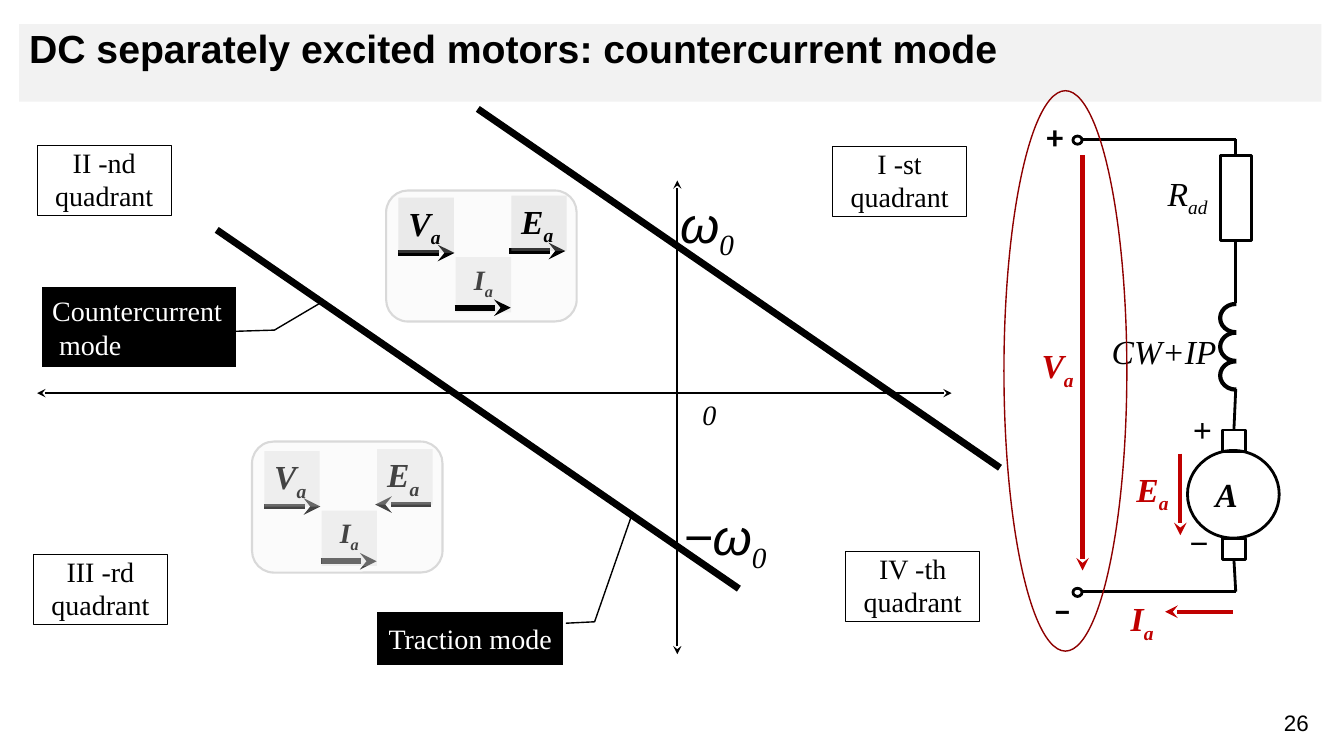
import dataclasses
import typing

import pptx
import pptx.dml.color
import pptx.enum.shapes
import pptx.enum.text
import pptx.oxml.ns
import pptx.util
from lxml import etree

Pt = pptx.util.Pt
KIND = pptx.enum.shapes.MSO_SHAPE
ALIGN = pptx.enum.text.PP_ALIGN
ANCHOR = pptx.enum.text.MSO_ANCHOR
HUES = {"black": "000000", "white": "FFFFFF", "band": "F2F2F2", "tile": "BFBFBF",
        "edge": "D9D9D9", "red": "C00000", "wine": "8E0000"}
ROMAN = "Times New Roman"
LEAD = 882.7  # x of the armature wire

deck = pptx.Presentation()
deck.slide_width, deck.slide_height = Pt(960), Pt(540)
slide = deck.slides.add_slide(deck.slide_layouts[6])
shapes = slide.shapes


@dataclasses.dataclass
class Box:
    x: float
    y: float
    w: float
    h: float
    fill: str = ""
    line: str = ""
    width: float = 1
    kind: int = KIND.RECTANGLE
    alpha: int = 100


@dataclasses.dataclass
class Font:
    size: float = 24
    hue: str = "black"
    bold: bool = False
    slant: bool = False
    face: str = ROMAN


@dataclasses.dataclass
class Label:
    box: Box
    main: str
    sub: str
    font: Font


def tint(name: str) -> pptx.dml.color.RGBColor:
    return pptx.dml.color.RGBColor.from_string(HUES[name])


def child(parent: typing.Any, tag: str, **attrs: str) -> None:
    etree.SubElement(parent, pptx.oxml.ns.qn(tag), attrs)


def draw(box: Box) -> typing.Any:
    shape = shapes.add_shape(box.kind, Pt(box.x), Pt(box.y), Pt(box.w), Pt(box.h))
    shape.shadow.inherit = False
    if box.fill:
        shape.fill.solid()
        shape.fill.fore_color.rgb = tint(box.fill)
        if box.alpha < 100:
            color = shape.fill._xPr.find(".//" + pptx.oxml.ns.qn("a:srgbClr"))
            child(color, "a:alpha", val=str(box.alpha * 1000))
    else:
        shape.fill.background()
    if box.line:
        shape.line.color.rgb = tint(box.line)
        shape.line.width = Pt(box.width)
    else:
        shape.line.fill.background()
    return shape


def link(x1: float, y1: float, x2: float, y2: float, hue: str = "black",
         width: float = 2, ends: tuple[str, ...] = ()) -> typing.Any:
    """Draw a straight line; ends lists headEnd and tailEnd where an arrowhead sits."""
    line = shapes.add_connector(pptx.enum.shapes.MSO_CONNECTOR.STRAIGHT,
                                Pt(x1), Pt(y1), Pt(x2), Pt(y2))
    line.line.color.rgb = tint(hue)
    line.line.width = Pt(width)
    for end in ends:
        child(line.line._get_or_add_ln(), "a:" + end, type="stealth")
    child(line._element.spPr, "a:effectLst")
    return line


def style(run: typing.Any, font: Font) -> None:
    run.font.size, run.font.name = Pt(font.size), font.face
    run.font.bold, run.font.italic = font.bold, font.slant
    run.font.color.rgb = tint(font.hue)


def write(box: Box, text: str, font: Font, align: int = ALIGN.LEFT,
          anchor: int = ANCHOR.TOP, inset: bool = True) -> typing.Any:
    """Draw a box holding text, one paragraph a line."""
    shape = draw(box) if box.fill or box.line else shapes.add_textbox(
        Pt(box.x), Pt(box.y), Pt(box.w), Pt(box.h))
    frame = shape.text_frame
    frame.word_wrap, frame.vertical_anchor = True, anchor
    if not inset:
        frame.margin_left = frame.margin_right = frame.margin_top = frame.margin_bottom = 0
    frame.text = text
    for para in frame.paragraphs:
        para.alignment = align
        for run in para.runs:
            style(run, font)
    return shape


def mark(label: Label, gap: float = 1.15, align: int = ALIGN.LEFT) -> None:
    """Write a symbol with its subscript."""
    para = write(label.box, label.main, label.font, align).text_frame.paragraphs[0]
    para.line_spacing = gap
    if label.sub:
        run = para.add_run()
        run.text = label.sub
        style(run, dataclasses.replace(label.font, face=ROMAN))
        run._r.get_or_add_rPr().set("baseline", "-25000")


def panel(x: float, y: float, drop: float, veil: bool) -> None:
    """Draw a vector panel; veil lays its card over the symbols and turns E round."""
    def tile(dx: float, dy: float, main: str, size: float, align: int) -> None:
        box = Box(x + dx, y + drop + dy, 39.6, 39.6, "tile", alpha=28)
        mark(Label(box, main, "a", Font(size, bold=True, slant=True)), 1, align)

    def base() -> None:
        tile(49.7, 47.5, "I", 20, ALIGN.CENTER)

    def card() -> None:
        draw(Box(x, y, 136.1, 93.6, "band", "edge", 1.5, KIND.ROUNDED_RECTANGLE, 28))

    if not veil:
        base()
        card()
    for dx, dy, back in ((88, 43.2, veil), (8.8, 44.6, False), (49, 83.7, False)):
        near, far = x + dx, x + dx + 40
        start, stop = (far, near) if back else (near, far)
        link(start, y + drop + dy, stop, y + drop + dy, width=4, ends=("tailEnd",))
    tile(89.4, 3.6, "Е", 24, ALIGN.LEFT)
    tile(8.8, 5, "V", 24, ALIGN.LEFT)
    if veil:
        base()
        card()


def note(box: Box, text: str, bend: tuple[float, ...], align: int) -> typing.Any:
    """Draw a callout; bend gives y, x of its leader as shares of the box."""
    shape = write(box, text, Font(20, "white"), align, ANCHOR.MIDDLE)
    for i, share in enumerate(bend):
        shape.adjustments[i] = share
    return shape


def graph() -> None:
    both = ("headEnd", "tailEnd")
    link(483.8, 467.3, 483.8, 128.9, width=1.25, ends=both)
    link(26.6, 280.8, 679.7, 280.8, width=1.25, ends=both)
    for x, y in ((154.8, 164.2), (341.3, 77.8)):
        link(x, y, x + 373, y + 256.3, width=5)
    for x, y, rank in ((594.7, 104.4, "I -st"), (26.6, 103.7, "II -nd"),
                       (23.8, 396, "III -rd"), (604.1, 393.8, "IV -th")):
        write(Box(x, y, 95.8, 50.4, "", "black", 0.75), rank + "\nquadrant", Font(20),
              ALIGN.CENTER, inset=False)
    write(Box(494.6, 280.1, 32.4, 38.2), "0", Font(20, slant=True))
    kind = KIND.LINE_CALLOUT_2_NO_BORDER
    counter = note(Box(30.2, 205.2, 138.2, 56.9, "black", "black", kind=kind),
                   "Countercurrent\nmode", (0.555, 0.973, 0.538, 1.2, 0.185, 1.446), ALIGN.LEFT)
    counter.text_frame.paragraphs[1]._p.get_or_add_pPr().set("marL", str(Pt(5)))
    note(Box(269.3, 437, 133.2, 38.2, "black", "black", kind=kind), "Traction mode",
         (0.215, 1.013, 0.188, 1.167, -1.866, 1.372), ALIGN.CENTER)
    panel(275.8, 136.1, 0, False)
    panel(180, 315.4, 1.8, True)
    for x, y, main in ((481, 349.9, "−ω"), (478.8, 126.7, "ω")):
        mark(Label(Box(x, y, 79.2, 56.2), main, "0", Font(36, slant=True, face="Arial")))


def circuit() -> None:
    for i in range(3):
        draw(Box(LEAD - 11.15, 217.1 + 20.5 * i, 22.3, 20.2, "white", "black", 3, KIND.OVAL))
    draw(Box(883.1, 175.3, 33.1, 123.1, "white"))
    plain, bold = Font(slant=True), Font(bold=True, slant=True)
    red, pole = Font(hue="red", bold=True, slant=True), Font(bold=True, face="Calibri")
    for label in (
        Label(Box(826.9, 114.8, 49.7, 61.9), "R", "ad", plain),
        Label(Box(787, 228.2, 95, 37.4), "CW+IP", "", plain),
        Label(Box(800.6, 419, 47.5, 46.1), "I", "a", red),
        Label(Box(842, 364.7, 33.8, 46.1, "white"), "−", "", bold),
        Label(Box(844.9, 284, 33.8, 46.1, "white"), "+", "", bold),
        Label(Box(804.6, 326.5, 50.4, 61.2), "Е", "a", red),
        Label(Box(861.1, 330.5, 40.3, 46.1), "A", "", bold),
        Label(Box(745.9, 413.3, 33.1, 46.1), "−", "", pole),
        Label(Box(740.5, 75.2, 33.8, 46.1), "+", "", pole),
        Label(Box(736.9, 238, 50.4, 61.2), "V", "a", red),
    ):
        mark(label)
    load = draw(Box(LEAD - 11.15, 110.9, 22.3, 61.2, "", "black", 2))
    brush = draw(Box(LEAD - 9.6, 307.1, 16.6, 15.8, "", "black", 2))
    draw(Box(848.2, 321.8, 65.5, 62.6, "", "black", 2, KIND.OVAL))
    foot = draw(Box(LEAD - 9.6, 384.5, 16.6, 15.1, "white", "black", 2))
    for part, site, y in ((load, 0, 99.4), (load, 2, 216.7), (brush, 0, 277.9), (foot, 2, 422.6)):
        link(LEAD, y, LEAD, y).begin_connect(part, site)
    for y, top in ((99.4, 97.2), (422.6, 420.2)):
        draw(Box(766.4, top, 6.5, 5.8, "", "black", 2, KIND.OVAL))
        link(LEAD, y, 772.6, y)
    for ray in ((880.6, 437, 832.3, 437), (843.1, 324, 843.1, 382.3),
                (773.3, 110.9, 773.3, 407.5)):
        link(*ray, hue="red", width=3, ends=("tailEnd",))
    draw(Box(717.1, 64.8, 87.8, 400.3, "", "wine", 1, KIND.OVAL))


def main() -> None:
    title = write(Box(13.7, 17.3, 930.2, 55.4, "band"),
                  "DC separately excited motors: countercurrent mode",
                  Font(28, bold=True, face="Arial"))
    title.text_frame.paragraphs[0].line_spacing = 0.9
    graph()
    circuit()
    write(Box(902.9, 503.3, 46.1, 26.6), "26", Font(16, face="Arial"), ALIGN.CENTER)
    deck.save("out.pptx")


if __name__ == "__main__":
    main()
